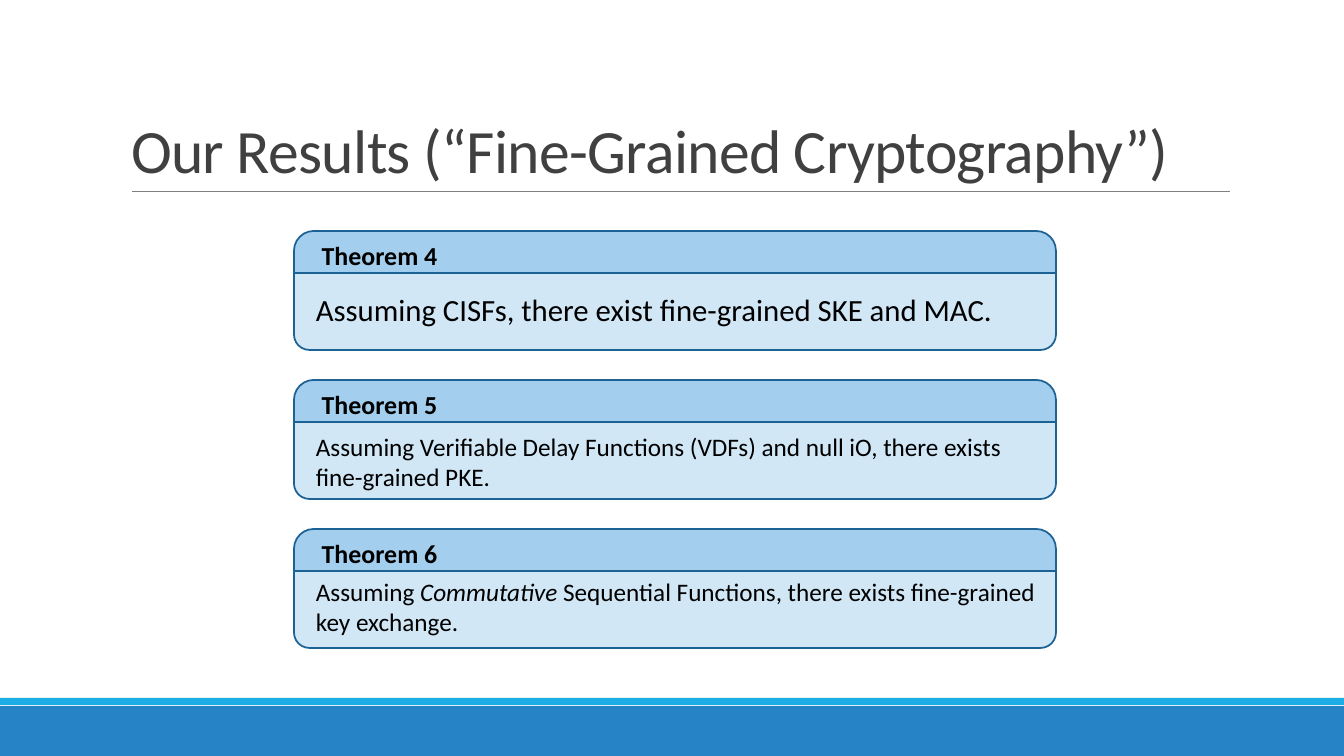
from dataclasses import dataclass

from lxml import etree
from pptx import Presentation
from pptx.dml.color import RGBColor
from pptx.enum.shapes import MSO_CONNECTOR, MSO_SHAPE
from pptx.enum.text import MSO_ANCHOR, MSO_AUTO_SIZE, PP_ALIGN
from pptx.oxml.ns import qn
from pptx.util import Emu, Pt

RECTANGLE = MSO_SHAPE.RECTANGLE
ROUNDED_PAIR = MSO_SHAPE.ROUND_2_SAME_RECTANGLE
STRAIGHT = MSO_CONNECTOR.STRAIGHT
LEFT = PP_ALIGN.LEFT
TOP, MIDDLE, BOTTOM = MSO_ANCHOR.TOP, MSO_ANCHOR.MIDDLE, MSO_ANCHOR.BOTTOM
NO_AUTOFIT = MSO_AUTO_SIZE.NONE
FIT_SHAPE = MSO_AUTO_SIZE.SHAPE_TO_FIT_TEXT

EMU_PER_PX = 914400 / 100.8
TITLE_ONLY_LAYOUT = 5
SLIDE_WIDTH, SLIDE_HEIGHT = 1344, 756

# Theorem card geometry
CARD_LEFT, CARD_TOP, CARD_WIDTH, CARD_PITCH = 294, 231, 762, 149
HEADER_HEIGHT, BODY_HEIGHT = 42, 77
HEADER_INDENT = 22
STATEMENT_LEFT = 306


@dataclass(frozen=True)
class Theme:
    font: str = "Calibri"
    title: str = "404040"
    text: str = "000000"
    rule: str = "808080"
    footer: str = "2683C6"
    footer_edge: str = "1CADE4"
    header_fill: str = "A3CEED"
    body_fill: str = "D1E7F6"
    outline: str = "1D6294"
    title_size: float = 44
    header_size: float = 18.5
    large_size: float = 22
    statement_size: float = 18
    space_after: float = 5.9


@dataclass(frozen=True)
class Box:
    left: int
    top: int
    width: int
    height: int

    def emu(self) -> tuple[Emu, ...]:
        return tuple(px(n) for n in (self.left, self.top, self.width, self.height))


@dataclass(frozen=True)
class Theorem:
    heading: str
    runs: tuple[str, ...]  # every second run is italic
    size: float
    text_offset: int
    text_width: int
    text_height: int


THEME = Theme()
THEOREMS = (
    Theorem("Theorem 4", ("Assuming CISFs, there exist fine-grained SKE and MAC.",),
            THEME.large_size, 55, 743, 47),
    Theorem("Theorem 5", ("Assuming Verifiable Delay Functions (VDFs) and null iO, "
                          "there exists fine-grained PKE.",),
            THEME.statement_size, 46, 729, 72),
    Theorem("Theorem 6", ("Assuming ", "Commutative",
                          " Sequential Functions, there exists fine-grained key exchange."),
            THEME.statement_size, 42, 745, 72),
)


def px(length: int) -> Emu:
    return Emu(round(length * EMU_PER_PX))


def rgb(color: str) -> RGBColor:
    return RGBColor.from_string(color)


def format_run(run, size: float, color: str, bold: bool = False, italic: bool = False) -> None:
    font = run.font
    font.name, font.size = THEME.font, Pt(size)
    font.bold, font.italic = bold, italic
    font.color.rgb = rgb(color)


def add_panel(slide, preset, box: Box, fill: str, outline: str | None = None):
    shape = slide.shapes.add_shape(preset, *box.emu())
    shape.shadow.inherit = False
    shape.fill.solid()
    shape.fill.fore_color.rgb = rgb(fill)
    if outline:
        shape.line.color.rgb = rgb(outline)
        shape.line.width = Pt(1.25)
    else:
        shape.line.fill.background()
    return shape


def add_rule(slide, start: int, end: int, y: int) -> None:
    line = slide.shapes.add_connector(STRAIGHT, px(start), px(y), px(end), px(y))
    line.line.color.rgb = rgb(THEME.rule)
    line.line.width = Pt(0.5)
    etree.SubElement(line._element.spPr, qn("a:effectLst"))


def set_title(slide, text: str, box: Box) -> None:
    title = slide.shapes.title
    title.left, title.top, title.width, title.height = box.emu()
    frame = title.text_frame
    frame.text = text
    frame.auto_size = NO_AUTOFIT
    frame.vertical_anchor = BOTTOM
    paragraph = frame.paragraphs[0]
    paragraph.alignment = LEFT
    paragraph.line_spacing = 0.85
    run = paragraph.runs[0]
    format_run(run, THEME.title_size, THEME.title)
    run.font._element.set("spc", "-50")


def add_theorem(slide, theorem: Theorem, top: int) -> None:
    # Header with rounded top corners
    header = add_panel(slide, ROUNDED_PAIR, Box(CARD_LEFT, top, CARD_WIDTH, HEADER_HEIGHT),
                       THEME.header_fill, THEME.outline)
    header.adjustments[0], header.adjustments[1] = 0.47, 0
    frame = header.text_frame
    frame.text = theorem.heading
    frame.margin_left = px(HEADER_INDENT)
    frame.vertical_anchor = MIDDLE
    paragraph = frame.paragraphs[0]
    paragraph.alignment = LEFT
    paragraph.space_after = Pt(THEME.space_after)
    format_run(paragraph.runs[0], THEME.header_size, THEME.text, bold=True)

    # Body with rounded bottom corners
    body_box = Box(CARD_LEFT, top + HEADER_HEIGHT, CARD_WIDTH, BODY_HEIGHT)
    body = add_panel(slide, ROUNDED_PAIR, body_box, THEME.body_fill, THEME.outline)
    body.adjustments[0], body.adjustments[1] = 0, 0.2

    # Statement
    statement_box = Box(STATEMENT_LEFT, top + theorem.text_offset,
                        theorem.text_width, theorem.text_height)
    frame = slide.shapes.add_textbox(*statement_box.emu()).text_frame
    frame.word_wrap = True
    frame.auto_size = FIT_SHAPE
    frame.vertical_anchor = TOP
    paragraph = frame.paragraphs[0]
    paragraph.alignment = LEFT
    paragraph.space_after = Pt(THEME.space_after)
    for index, text in enumerate(theorem.runs):
        run = paragraph.add_run()
        run.text = text
        format_run(run, theorem.size, THEME.text, italic=index % 2 == 1)


def main() -> None:
    presentation = Presentation()
    presentation.slide_width, presentation.slide_height = px(SLIDE_WIDTH), px(SLIDE_HEIGHT)
    slide = presentation.slides.add_slide(presentation.slide_layouts[TITLE_ONLY_LAYOUT])

    # Footer bands and title rule
    add_panel(slide, RECTANGLE, Box(0, 706, SLIDE_WIDTH, 50), THEME.footer)
    add_panel(slide, RECTANGLE, Box(0, 698, SLIDE_WIDTH, 7), THEME.footer_edge)
    add_rule(slide, 132, 1230, 191)

    # Title and theorem cards
    set_title(slide, "Our Results (“Fine-Grained Cryptography”)", Box(121, 31, 1109, 160))
    for index, theorem in enumerate(THEOREMS):
        add_theorem(slide, theorem, CARD_TOP + index * CARD_PITCH)

    presentation.save("out.pptx")


if __name__ == "__main__":
    main()
